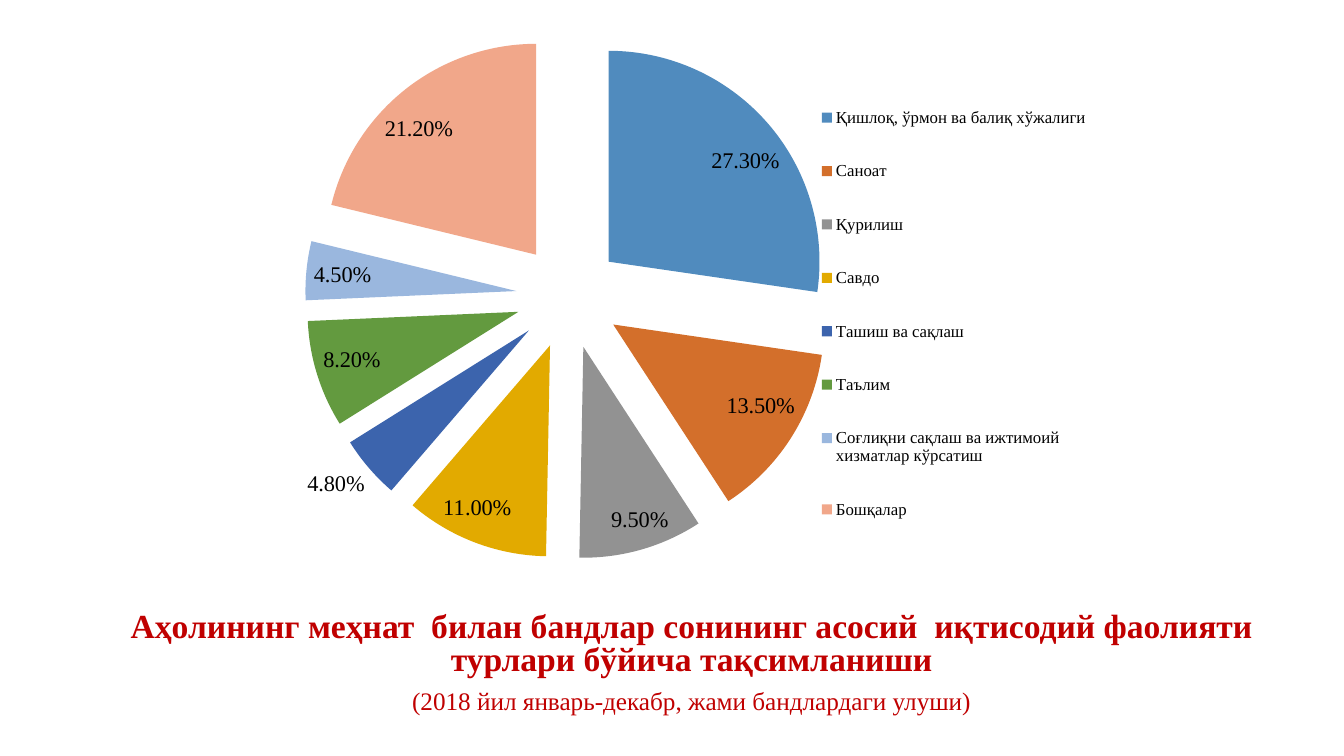
from lxml import etree
from pptx import Presentation
from pptx.chart.data import CategoryChartData
from pptx.dml.color import RGBColor
from pptx.enum import chart as charts, text
from pptx.util import Cm, Pt

FONT = "Times New Roman"
COLOURS = {"heading": "C00000", "text": "000000"}
SECTORS = [
    ("Қишлоқ, ўрмон ва балиқ хўжалиги", 0.273, "508BBE"),
    ("Саноат", 0.135, "D36F2B"),
    ("Қурилиш", 0.095, "929292"),
    ("Савдо", 0.11, "E2AA00"),
    ("Ташиш ва сақлаш", 0.048, "3C64AD"),
    ("Таълим", 0.082, "639A3F"),
    ("Соғлиқни сақлаш ва ижтимоий хизматлар кўрсатиш", 0.045, "9AB7DE"),
    ("Бошқалар", 0.212, "F1A78A"),
]
HEADING = [
    ("Аҳолининг меҳнат  билан бандлар сонининг асосий  иқтисодий фаолияти турлари бўйича тақсимланиши", 24, True),
    ("(2018 йил январь-декабр, жами бандлардаги улуши)", 18, False),
]


def style_font(font, size, colour, bold=False):
    font.name = FONT
    font.size = Pt(size)
    font.bold = bold
    font.color.rgb = RGBColor.from_string(colour)


def set_layout(parent, index, **fractions):
    namespace = parent.nsmap["c"]
    for old in parent.findall(f"{{{namespace}}}layout"):
        parent.remove(old)
    layout = etree.Element(f"{{{namespace}}}layout")
    manual = etree.SubElement(layout, f"{{{namespace}}}manualLayout")
    settings = {"xMode": "edge", "yMode": "edge", **fractions}
    for name, value in settings.items():
        etree.SubElement(manual, f"{{{namespace}}}{name}", val=str(value))
    parent.insert(index, layout)


deck = Presentation()
deck.slide_width, deck.slide_height = Cm(33.87), Cm(19.05)
page = deck.slides.add_slide(deck.slide_layouts[5])

title = page.shapes.title
title.left, title.top, title.width, title.height = Cm(1.57), Cm(15.32), Cm(31.72), Cm(3)
frame = title.text_frame
frame.text = "\n".join(line for line, size, bold in HEADING)
frame.word_wrap = True
frame.auto_size = text.MSO_AUTO_SIZE.NONE
frame.vertical_anchor = text.MSO_ANCHOR.TOP
for para, (line, size, bold) in zip(frame.paragraphs, HEADING):
    para.alignment = text.PP_ALIGN.CENTER
    para.line_spacing = 0.8
    para.space_before = Pt(10)
    style_font(para.runs[0].font, size, COLOURS["heading"], bold)

data = CategoryChartData(number_format="0.00%")
data.categories = [name for name, share, colour in SECTORS]
data.add_series("Series 1", [share for name, share, colour in SECTORS])
chart = page.shapes.add_chart(
    charts.XL_CHART_TYPE.PIE, Cm(5.33), Cm(0.53), Cm(23.39), Cm(14.6), data
).chart
chart.has_title = False
style_font(chart.font, 10, COLOURS["text"])

chart.has_legend = True
chart.legend.position = charts.XL_LEGEND_POSITION.RIGHT
chart.legend.include_in_layout = False
style_font(chart.legend.font, 12, COLOURS["text"])

pie = chart.plots[0]
pie.vary_by_categories = True
pie.has_data_labels = True
labels = pie.data_labels
labels.show_value = True
labels.show_percentage = False
labels.number_format = "0.00%"
labels.number_format_is_linked = False
labels.position = charts.XL_LABEL_POSITION.BEST_FIT
style_font(labels.font, 16, COLOURS["text"])

for index, (name, share, colour) in enumerate(SECTORS):
    point = pie.series[0].points[index]
    point.format.fill.solid()
    point.format.fill.fore_color.rgb = RGBColor.from_string(colour)
    point.format.line.fill.background()

first_slice = chart.element.xpath(".//c:dPt")[0]
explosion = etree.Element(f"{{{first_slice.nsmap['c']}}}explosion", val="25")
first_slice.addprevious(explosion)
set_layout(chart.element.xpath(".//c:plotArea")[0], 0, x=0.1, y=0.02, w=0.57, h=0.91)
set_layout(chart.element.xpath(".//c:legend")[0], 1, x=0.65, y=0.09, w=0.3, h=0.83)

deck.save("out.pptx")
